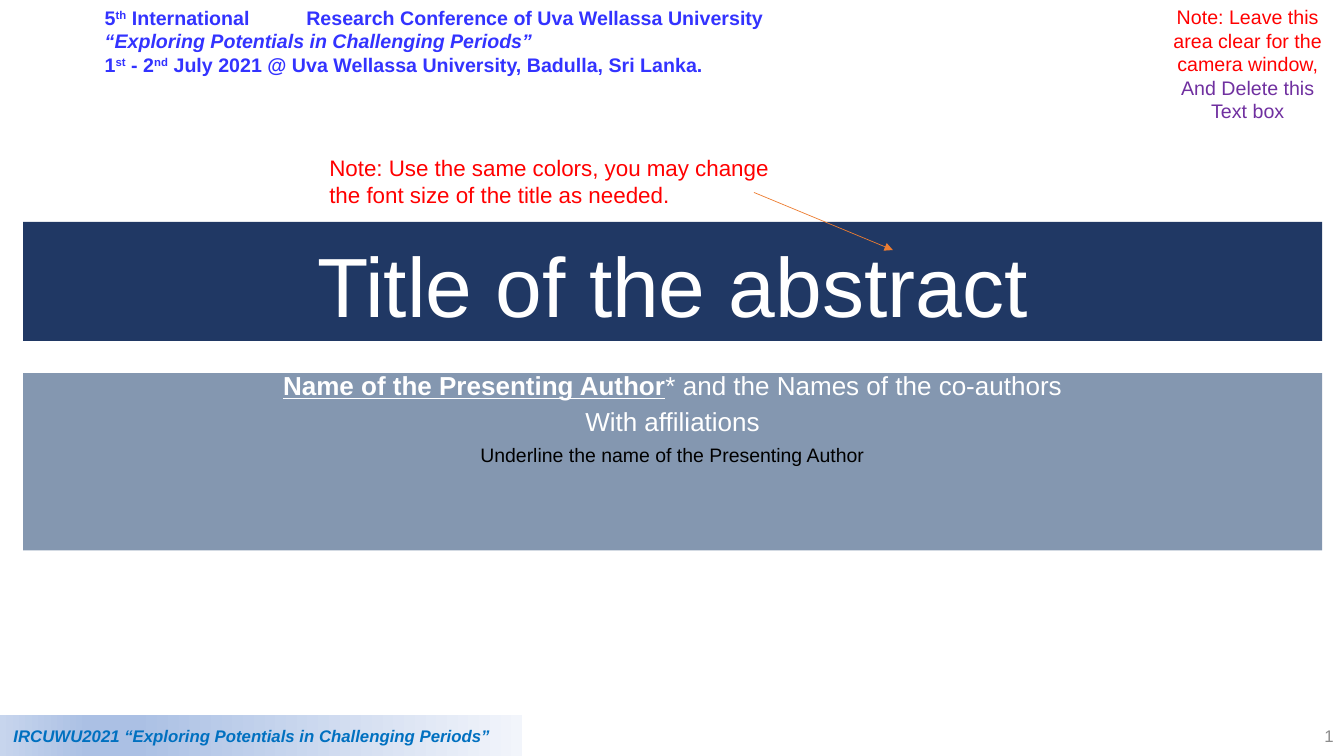
from dataclasses import dataclass

from lxml import etree
from pptx import Presentation
from pptx.dml import color as c
from pptx.enum import shapes, text
from pptx.oxml import ns, xmlchemy
from pptx.util import Cm, Pt


@dataclass(frozen=True)
class Theme:
    font: str = "Arial"
    # Colours
    navy: str = "203864"
    slate: str = "8497B0"
    white: str = "FFFFFF"
    black: str = "000000"
    red: str = "FF0000"
    purple: str = "7030A0"
    blue: str = "3333FF"
    footer: str = "0070C0"
    grey: str = "8C8C8C"
    orange: str = "ED7D31"
    footer_stops: tuple = ((0, "F2F5FB"), (74, "ABC0E4"), (83, "ABC0E4"), (100, "C7D5ED"))
    # Type sizes
    title: float = 60
    authors: float = 18.6
    hint: float = 13.9
    note: float = 16
    header: float = 14
    small: float = 12


T = Theme()
ALIGN = text.PP_ALIGN
ANCHOR = text.MSO_ANCHOR


def rgb(value):
    return c.RGBColor.from_string(value)


def place(sp, left, top, width, height):
    sp.left, sp.top, sp.width, sp.height = map(Cm, (left, top, width, height))


def paint(sp, colour):
    sp.fill.solid()
    sp.fill.fore_color.rgb = rgb(colour)


def style(p, size, colour, align=ALIGN.LEFT, bold=None, italic=None):
    p.alignment = align
    f = p.font
    f.name, f.size, f.bold, f.italic = T.font, Pt(size), bold, italic
    f.color.rgb = rgb(colour)


def add_line(tf, line, *args, **kwargs):
    """Append a styled paragraph, reusing the empty first one."""
    p = tf.paragraphs[0]
    if p.runs:
        p = tf.add_paragraph()
    style(p, *args, **kwargs)
    p.add_run().text = line
    return p


def add_box(s, left, top, width, height, anchor=ANCHOR.TOP, grow=True):
    sp = s.shapes.add_textbox(*map(Cm, (left, top, width, height)))
    tf = sp.text_frame
    tf.word_wrap = True
    tf.vertical_anchor = anchor
    if grow:
        tf.auto_size = text.MSO_AUTO_SIZE.SHAPE_TO_FIT_TEXT
    return tf


def band(sp, left, top, width, height, colour, anchor):
    """Turn a placeholder into a full-width coloured band."""
    place(sp, left, top, width, height)
    paint(sp, colour)
    tf = sp.text_frame
    tf.auto_size = text.MSO_AUTO_SIZE.NONE
    tf.vertical_anchor = anchor
    return tf


def add_footer(s):
    sp = s.shapes.add_shape(shapes.MSO_SHAPE.RECTANGLE, *map(Cm, (0, 18.03, 13.16, 1.02)))
    sp.shadow.inherit = False
    sp.line.fill.background()
    sp.fill.gradient()
    sp.fill.gradient_angle = 180
    stops = sp._element.spPr.find(ns.qn("a:gradFill")).find(ns.qn("a:gsLst"))
    for old in list(stops):
        stops.remove(old)
    for pos, colour in T.footer_stops:
        gs = etree.SubElement(stops, ns.qn("a:gs"), pos=str(pos * 1000))
        etree.SubElement(gs, ns.qn("a:srgbClr"), val=colour)
    tf = sp.text_frame
    tf.margin_left = Cm(0.34)
    tf.vertical_anchor = ANCHOR.MIDDLE
    add_line(tf, "IRCUWU2021 “Exploring Potentials in Challenging Periods”",
             T.small, T.footer, bold=True, italic=True)


def add_header(s):
    tf = add_box(s, 2.39, 0, 19, 2.06, ANCHOR.MIDDLE)
    # Each line is a list of (words, is superscript)
    lines = (
        (("5", False), ("th", True),
         (" International\tResearch Conference of Uva Wellassa University", False)),
        (("“Exploring Potentials in Challenging Periods”", False),),
        (("1", False), ("st", True), (" - 2", False), ("nd", True),
         (" July 2021 @ Uva Wellassa University, Badulla, Sri Lanka.", False)),
    )
    for i, line in enumerate(lines):
        p = tf.paragraphs[0] if i == 0 else tf.add_paragraph()
        if i == 0:
            tabs = etree.SubElement(p._p.get_or_add_pPr(), ns.qn("a:tabLst"))
            etree.SubElement(tabs, ns.qn("a:tab"), pos=str(Cm(5.08)), algn="l")
        style(p, T.header, T.blue, bold=True, italic=i == 1)
        for words, raised in line:
            r = p.add_run()
            r.text = words
            if raised:
                r._r.get_or_add_rPr().set("baseline", "30000")


def add_arrow(s, x1, y1, x2, y2):
    cn = s.shapes.add_connector(shapes.MSO_CONNECTOR.STRAIGHT, *map(Cm, (x1, y1, x2, y2)))
    cn.line.color.rgb = rgb(T.orange)
    cn.line.width = Pt(0.5)
    etree.SubElement(cn.line._get_or_add_ln(), ns.qn("a:tailEnd"), type="triangle")
    etree.SubElement(cn._element.spPr, ns.qn("a:effectLst"))


def add_slide_number(s):
    p = add_box(s, 26.24, 18.03, 7.62, 1.02, ANCHOR.MIDDLE, grow=False).paragraphs[0]
    style(p, T.small, T.grey, ALIGN.RIGHT)
    fld = etree.SubElement(p._p, ns.qn("a:fld"), type="slidenum",
                           id="{B6F15528-21DE-4FAA-801E-634DDDAF4B2B}")
    etree.SubElement(fld, ns.qn("a:rPr"), lang="en-US")
    etree.SubElement(fld, ns.qn("a:t")).text = "1"


def main():
    prs = Presentation()
    prs.slide_width, prs.slide_height = Cm(33.87), Cm(19.05)
    s = prs.slides.add_slide(prs.slide_layouts[0])
    title, authors = s.placeholders

    # Title and author bands
    tf = band(title, 0.58, 5.59, 32.74, 3, T.navy, ANCHOR.BOTTOM)
    p = add_line(tf, "Title of the abstract", T.title, T.white, ALIGN.CENTER)
    p.line_spacing = 0.9

    tf = band(authors, 0.58, 9.4, 32.74, 4.47, T.slate, ANCHOR.TOP)
    p = add_line(tf, "Name of the Presenting Author", T.authors, T.white, ALIGN.CENTER)
    p.runs[0].font.bold = p.runs[0].font.underline = True
    p.add_run().text = "* and the Names of the co-authors"
    add_line(tf, "With affiliations", T.authors, T.white, ALIGN.CENTER)
    add_line(tf, "Underline the name of the Presenting Author", T.hint, T.black, ALIGN.CENTER)
    for i, p in enumerate(tf.paragraphs):
        p.line_spacing = 0.7
        p.space_before = Pt(10 if i else 0)

    # Header, footer and slide number
    add_header(s)
    add_footer(s)
    add_slide_number(s)

    # Notes to the presenter
    tf = add_box(s, 29.03, 0, 4.83, 3.25)
    add_line(tf, "Note: Leave this area clear for the camera window,",
             T.header, T.red, ALIGN.CENTER)
    add_line(tf, "And Delete this Text box", T.header, T.purple, ALIGN.CENTER)
    tf = add_box(s, 8.05, 3.76, 12.4, 1.63)
    add_line(tf, "Note: Use the same colors, you may change the font size of the title as needed.",
             T.note, T.red)
    add_arrow(s, 19, 4.85, 22.5, 6.3)

    prs.save("out.pptx")


if __name__ == "__main__":
    main()
